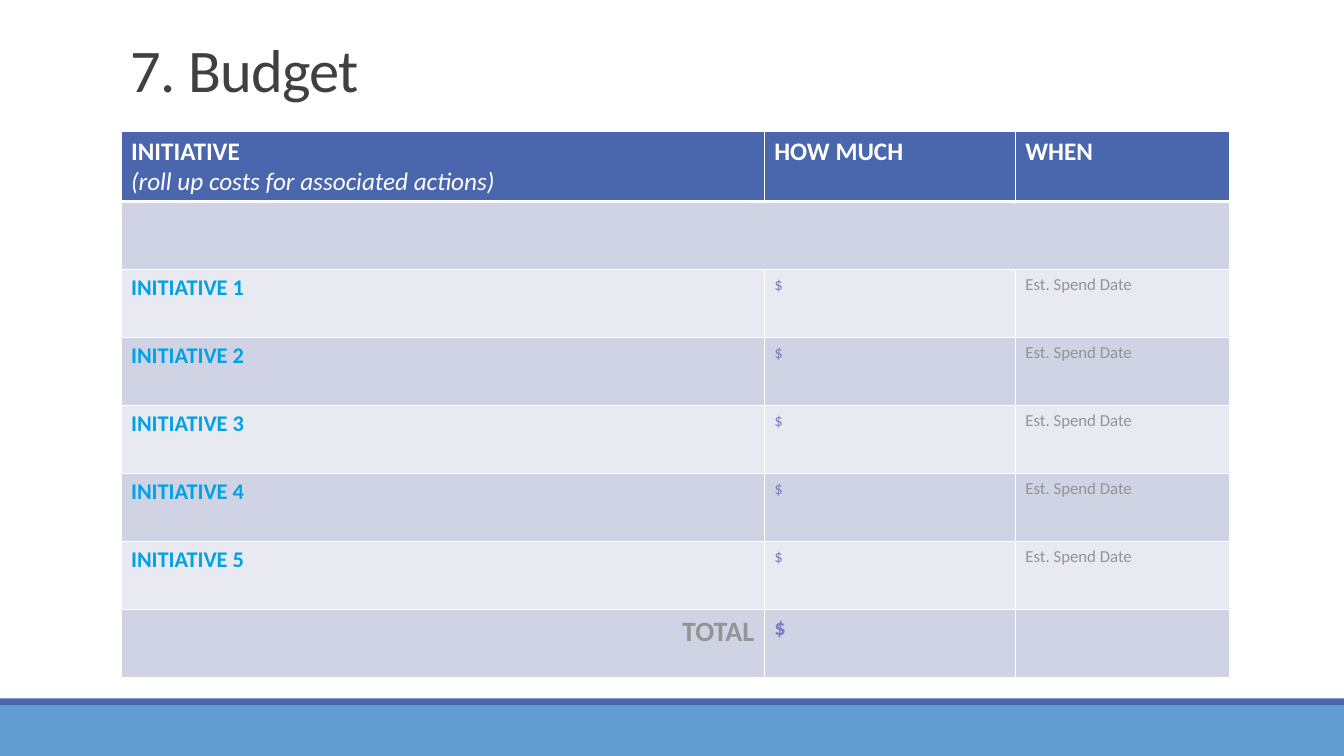
from dataclasses import dataclass

import pptx
import pptx.dml.color
import pptx.enum.shapes
import pptx.enum.text
import pptx.oxml
import pptx.oxml.ns
import pptx.util
from pptx.util import Inches

COLORS = {
    "white": "FFFFFF",
    "title": "404040",
    "header": "4A66AC",
    "footer": "629DD1",
    "band_dark": "D0D3E3",
    "band_light": "E9EAF1",
    "initiative": "00A2E6",
    "amount": "777DC3",
    "muted": "949494",
}
FONT = "Calibri"
COLUMN_WIDTHS = (6.38, 2.49, 2.13)
TABLE_HEIGHT = 5.42
HEADER_HEIGHT = 0.7
INITIATIVES = 5


@dataclass(frozen=True)
class Line:
    text: str
    size: float
    color: str
    bold: bool = False
    italic: bool = False
    align_right: bool = False


@dataclass(frozen=True)
class Bar:
    top: float
    height: float
    color: str


Row = list[list[Line]]

FOOTER_BARS = (Bar(7, 0.5, "footer"), Bar(6.93, 0.07, "header"))


def rgb(name: str) -> pptx.dml.color.RGBColor:
    return pptx.dml.color.RGBColor.from_string(COLORS[name])


def write_line(p, line: Line) -> None:
    p.text = line.text
    font = p.font
    font.name = FONT
    font.size = pptx.util.Pt(line.size)
    font.bold = line.bold
    font.italic = line.italic
    font.color.rgb = rgb(line.color)
    if line.align_right:
        p.alignment = pptx.enum.text.PP_ALIGN.RIGHT


def add_bar(slide, bar: Bar, width: int) -> None:
    s = slide.shapes.add_shape(pptx.enum.shapes.MSO_SHAPE.RECTANGLE,
                               0, Inches(bar.top), width, Inches(bar.height))
    s.shadow.inherit = False
    s.fill.solid()
    s.fill.fore_color.rgb = rgb(bar.color)
    s.line.fill.background()


def add_title(slide, line: Line) -> None:
    s = slide.shapes.add_textbox(Inches(1.2), Inches(0.31), Inches(11), Inches(0.78))
    tf = s.text_frame
    tf.word_wrap = True
    tf.vertical_anchor = pptx.enum.text.MSO_ANCHOR.BOTTOM
    p = tf.paragraphs[0]
    write_line(p, line)
    p.line_spacing = 0.85
    p.runs[0].font._element.set("spc", "-50")


def set_borders(cell, top: float, bottom: float) -> None:
    """Give a cell white borders: 1 pt at the sides, the given points above and below."""
    tc_pr = cell._tc.get_or_add_tcPr()
    for side, points in (("L", 1), ("R", 1), ("T", top), ("B", bottom)):
        tc_pr.append(pptx.oxml.parse_xml(
            f'<a:ln{side} {pptx.oxml.ns.nsdecls("a")} w="{pptx.util.Pt(points)}">'
            f'<a:solidFill><a:srgbClr val="{COLORS["white"]}"/></a:solidFill>'
            f'</a:ln{side}>'))


def fill_cell(cell, lines: list[Line], row: int) -> None:
    set_borders(cell, top=3 if row == 1 else 1, bottom=3 if row == 0 else 1)
    band = "band_dark" if row % 2 else "band_light"
    cell.fill.solid()
    cell.fill.fore_color.rgb = rgb("header" if row == 0 else band)
    tf = cell.text_frame
    for i, line in enumerate(lines):
        write_line(tf.add_paragraph() if i else tf.paragraphs[0], line)


def budget_rows() -> list[Row]:
    header = [
        [Line("INITIATIVE", 18, "white", bold=True),
         Line("(roll up costs for associated actions)", 18, "white", italic=True)],
        [Line("HOW MUCH", 18, "white", bold=True)],
        [Line("WHEN", 18, "white", bold=True)],
    ]
    initiatives = [
        [[Line(f"INITIATIVE {n}", 16, "initiative", bold=True)],
         [Line("$", 12, "amount")],
         [Line("Est. Spend Date", 12, "muted")]]
        for n in range(1, INITIATIVES + 1)
    ]
    total = [
        [Line("TOTAL", 20, "muted", bold=True, align_right=True)],
        [Line("$", 16, "amount", bold=True)],
        [],
    ]
    return [header, [[], [], []], *initiatives, total]


def add_budget_table(slide, rows: list[Row]) -> None:
    table = slide.shapes.add_table(
        len(rows), len(COLUMN_WIDTHS), Inches(1.2), Inches(1.3),
        Inches(sum(COLUMN_WIDTHS)), Inches(TABLE_HEIGHT)).table
    for column, width in zip(table.columns, COLUMN_WIDTHS):
        column.width = Inches(width)
    body_height = (TABLE_HEIGHT - HEADER_HEIGHT) / (len(rows) - 1)
    for i, row in enumerate(rows):
        table.rows[i].height = Inches(body_height if i else HEADER_HEIGHT)
        for j, lines in enumerate(row):
            fill_cell(table.cell(i, j), lines, i)
    table.cell(1, 0).merge(table.cell(1, len(COLUMN_WIDTHS) - 1))


def main() -> None:
    prs = pptx.Presentation()
    prs.slide_width = Inches(13.33)
    prs.slide_height = Inches(7.5)
    slide = prs.slides.add_slide(prs.slide_layouts[6])
    for bar in FOOTER_BARS:
        add_bar(slide, bar, prs.slide_width)
    add_title(slide, Line("7. Budget", 43.2, "title"))
    add_budget_table(slide, budget_rows())
    prs.save("out.pptx")


if __name__ == "__main__":
    main()
